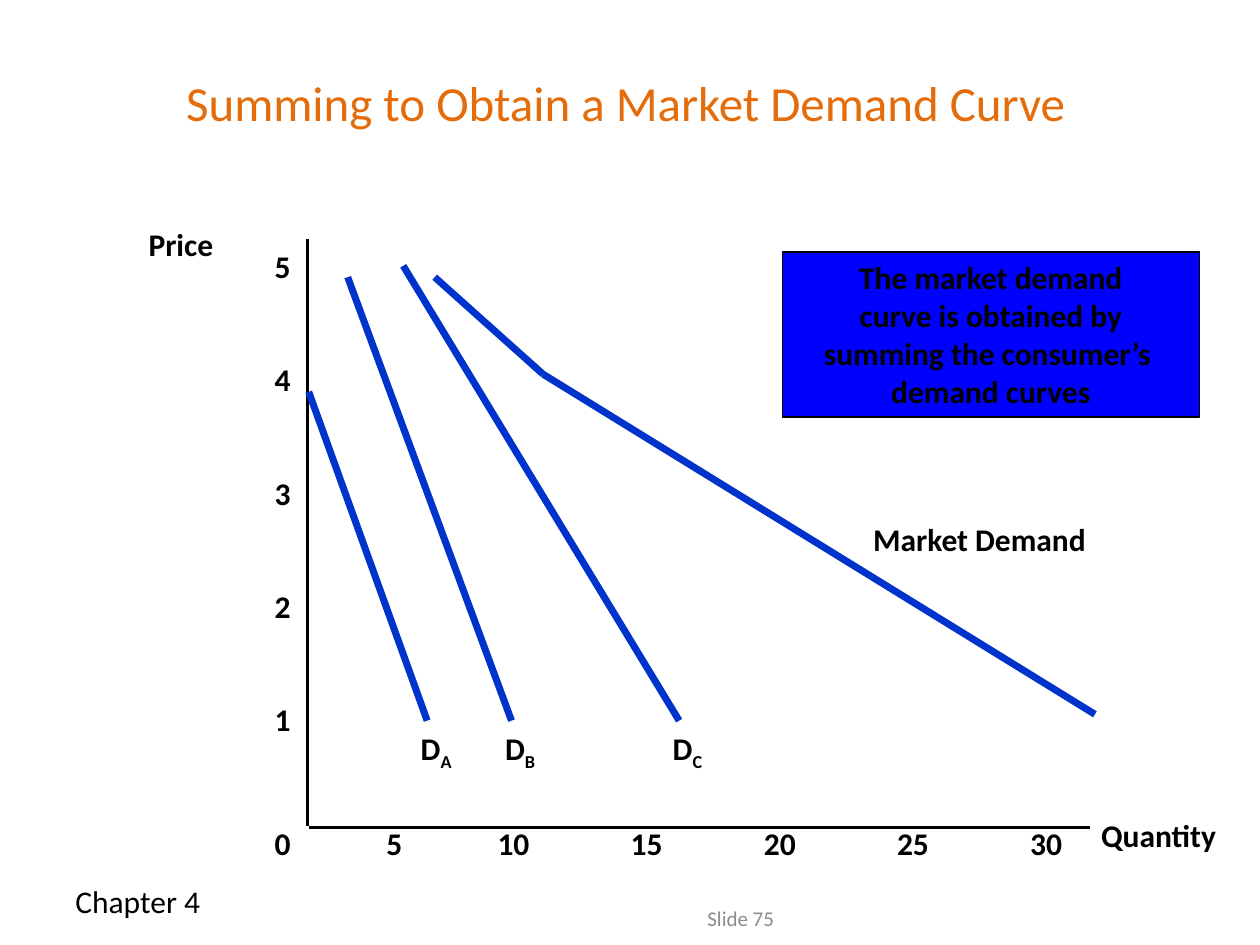
"""Build a slide that sums individual demand curves into a market demand curve."""
from lxml.etree import SubElement
from pptx import Presentation
from pptx.dml.color import RGBColor
from pptx.enum.shapes import MSO_CONNECTOR as Connector, MSO_SHAPE as Shape
from pptx.enum.text import MSO_ANCHOR as Anchor, MSO_AUTO_SIZE as AutoSize, PP_ALIGN as Align
from pptx.oxml.ns import qn
from pptx.util import Pt

COLORS = {"title": "E46C0A", "ink": "000000", "muted": "8C8C8C",
          "curve": "0033CC", "note": "0000FF"}
FONT = "Calibri"

TITLE = "Summing to Obtain a Market Demand Curve"
FOOTER = "Chapter 4"
SLIDE_NUMBER = "Slide 75"
NOTE = ["The market demand", "curve is obtained by",
        "summing the consumer’s ", "demand curves"]

AXES = [(175.7, 136.8, 175.7, 472.3), (176.4, 473, 622.8, 473)]
AXIS_LABELS = [("Price", 77.8, 125.3, 68.4), ("Quantity", 622.1, 463, 92.2)]
PRICES = [5, 4, 3, 2, 1]
PRICE_LEFT, PRICE_TOP, PRICE_STEP = 149.8, 137.5, 64.8
QUANTITIES = [10, 15, 20, 25, 30]
QUANTITY_LEFT, QUANTITY_TOP, QUANTITY_STEP = 277.2, 467.3, 76.1
SMALL_QUANTITIES = [(0, 149.8), (5, 213.8)]

CURVES = [("A", 176.4, 223.9, 244.1), ("B", 198.7, 158.4, 292.3), ("C", 230.4, 151.9, 388.1)]
CURVE_BOTTOM = 411.8
MARKET_POINTS = [(248.4, 158.4), (310.3, 213.8), (625.7, 408.2)]


def style_paragraph(para, size=18, color="ink", bold=True, align=Align.LEFT):
    para.alignment = align
    for span in para.runs:
        span.font.name = FONT
        span.font.size = Pt(size)
        span.font.bold = bold
        span.font.color.rgb = RGBColor.from_string(COLORS[color])


def add_text(page, text, left, top, width, height, wrap=True, anchor=Anchor.TOP, **style):
    box = page.shapes.add_textbox(Pt(left), Pt(top), Pt(width), Pt(height))
    frame = box.text_frame
    frame.word_wrap = wrap
    frame.vertical_anchor = anchor
    frame.text = text
    style_paragraph(frame.paragraphs[0], **style)
    return box


def add_label(page, text, left, top, width, height=29, wrap=False):
    box = add_text(page, text, left, top, width, height, wrap)
    box.text_frame.auto_size = AutoSize.SHAPE_TO_FIT_TEXT
    return box


def add_line(page, start_x, start_y, end_x, end_y, color, width):
    line = page.shapes.add_connector(
        Connector.STRAIGHT, Pt(start_x), Pt(start_y), Pt(end_x), Pt(end_y))
    line.line.color.rgb = RGBColor.from_string(COLORS[color])
    line.line.width = Pt(width)
    SubElement(line._element.spPr, qn("a:effectLst"))


def add_axes(page):
    for axis in AXES:
        add_line(page, *axis, "ink", 2)
    for text, left, top, width in AXIS_LABELS:
        add_label(page, text, left, top, width)
    for row, price in enumerate(PRICES):
        add_label(page, str(price), PRICE_LEFT, PRICE_TOP + row * PRICE_STEP, 25)
    for quantity, left in SMALL_QUANTITIES:
        add_label(page, str(quantity), left, QUANTITY_TOP, 24.5)
    for column, quantity in enumerate(QUANTITIES):
        left = QUANTITY_LEFT + column * QUANTITY_STEP
        add_label(page, str(quantity), left, QUANTITY_TOP, 34.6)


def add_curves(page):
    for name, start_x, start_y, end_x in CURVES:
        add_line(page, start_x, start_y, end_x, CURVE_BOTTOM, "curve", 4)
        box = add_label(page, "D", end_x - 10.8, CURVE_BOTTOM + 1.5, 43.9, 31, wrap=True)
        para = box.text_frame.paragraphs[0]
        span = para.add_run()
        span.text = name
        style_paragraph(para)
        span.font._element.set("baseline", "-25000")
    for start, end in zip(MARKET_POINTS, MARKET_POINTS[1:]):
        add_line(page, *start, *end, "curve", 4)
    add_label(page, "Market Demand", 491.8, 293.8, 163.4)


def add_note(page):
    box = page.shapes.add_shape(Shape.RECTANGLE, Pt(447.1), Pt(144), Pt(238.3), Pt(94.3))
    box.shadow.inherit = False
    box.fill.solid()
    box.fill.fore_color.rgb = RGBColor.from_string(COLORS["note"])
    box.line.color.rgb = RGBColor.from_string(COLORS["ink"])
    box.line.width = Pt(1)
    frame = box.text_frame
    frame.word_wrap = False
    frame.auto_size = AutoSize.SHAPE_TO_FIT_TEXT
    frame.vertical_anchor = Anchor.TOP
    frame.text = "\n".join(NOTE)
    for para in frame.paragraphs:
        style_paragraph(para, align=Align.CENTER)


def main():
    deck = Presentation()
    deck.slide_width, deck.slide_height = Pt(720), Pt(540)
    page = deck.slides.add_slide(deck.slide_layouts[6])
    add_text(page, FOOTER, 36, 500.4, 167.8, 28.8, bold=False)
    add_text(page, SLIDE_NUMBER, 282.2, 510.5, 282.2, 28.8, anchor=Anchor.MIDDLE,
             size=12, color="muted", bold=False, align=Align.CENTER)
    add_text(page, TITLE, 43.2, 27.4, 628.6, 61.2, anchor=Anchor.MIDDLE,
             size=28, color="title", bold=False, align=Align.CENTER)
    add_axes(page)
    add_curves(page)
    add_note(page)
    deck.save("out.pptx")


if __name__ == "__main__":
    main()
